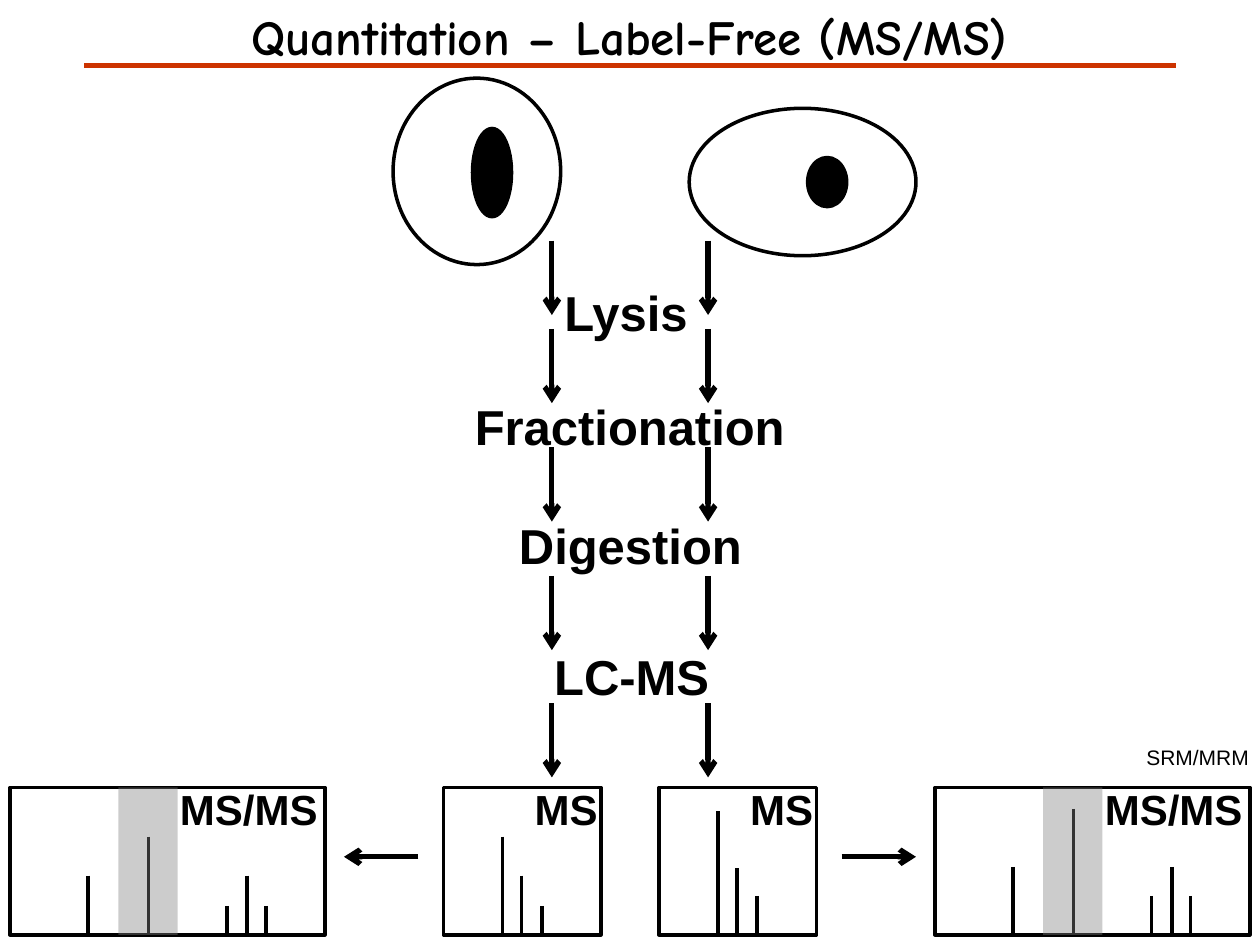
from lxml import etree
from pptx import Presentation
from pptx.dml.color import RGBColor
from pptx.enum import shapes, text
from pptx.oxml.ns import qn
from pptx.util import Inches, Pt

BLACK = "000000"
PANEL_HEIGHT = 1.17
MS_OFFSETS = (0.47, 0.62, 0.78)
MSMS_OFFSETS = (0.62, 1.1, 1.72, 1.88, 2.03)


def color(value):
    """Turn a hex string into a colour."""
    return RGBColor.from_string(value)


def write(shape, words, size=28, bold=True, font="Arial", align=text.PP_ALIGN.LEFT):
    """Put one formatted, unwrapped paragraph into a shape."""
    frame = shape.text_frame
    frame.word_wrap = False
    frame.auto_size = text.MSO_AUTO_SIZE.NONE
    frame.vertical_anchor = text.MSO_ANCHOR.TOP
    paragraph = frame.paragraphs[0]
    paragraph.text = words
    paragraph.alignment = align
    paragraph.font.size = Pt(size)
    paragraph.font.bold = bold
    paragraph.font.name = font
    paragraph.font.color.rgb = color(BLACK)


def add_label(slide, words, left, top, width, height, **style):
    """Add a text box with formatted words."""
    box = slide.shapes.add_textbox(Inches(left), Inches(top), Inches(width), Inches(height))
    write(box, words, **style)


def add_line(slide, x1, y1, x2, y2, width=2, line=BLACK, arrow=False):
    """Add a straight line, with an arrowhead at its end if asked."""
    connector = slide.shapes.add_connector(
        shapes.MSO_CONNECTOR.STRAIGHT, Inches(x1), Inches(y1), Inches(x2), Inches(y2))
    connector.line.color.rgb = color(line)
    connector.line.width = Pt(width)
    if arrow:
        etree.SubElement(connector.line._get_or_add_ln(), qn("a:tailEnd"), type="arrow")
    etree.SubElement(connector._element.spPr, qn("a:effectLst"))


def add_shape(slide, kind, left, top, width, height, fill=None, alpha=None, line=BLACK):
    """Add a preset shape with optional fill, opacity in percent and outline."""
    shape = slide.shapes.add_shape(
        kind, Inches(left), Inches(top), Inches(width), Inches(height))
    shape.shadow.inherit = False
    if fill:
        shape.fill.solid()
        shape.fill.fore_color.rgb = color(fill)
    else:
        shape.fill.background()
    if alpha:
        fill_color = shape._element.spPr.find(qn("a:solidFill"))[0]
        etree.SubElement(fill_color, qn("a:alpha"), val=str(alpha * 1000))
    if line:
        shape.line.color.rgb = color(line)
        shape.line.width = Pt(2)
    else:
        shape.line.fill.background()


def add_title(slide, left, top, width, height):
    """Place the title and the rule beneath it."""
    title = slide.shapes.title
    title.left, title.top = Inches(left), Inches(top)
    title.width, title.height = Inches(width), Inches(height)
    write(title, "Quantitation – Label-Free (MS/MS)", font="Comic Neue",
          align=text.PP_ALIGN.CENTER)
    add_line(slide, 0.67, 0.52, 9.33, 0.52, width=2.5, line="CC3300")


def add_cell(slide, left, top, width, height, nucleus):
    """Draw a cell outline with its nucleus, given relative to the cell."""
    oval = shapes.MSO_SHAPE.OVAL
    x, y, nucleus_width, nucleus_height = nucleus
    add_shape(slide, oval, left + x, top + y, nucleus_width, nucleus_height, fill=BLACK)
    add_shape(slide, oval, left, top, width, height)


def add_workflow(slide, left, right):
    """Draw the preparation steps and the two columns of arrows."""
    steps = (("Lysis", 4.38, 2.19, 1.19), ("Fractionation", 3.67, 3.1, 2.69),
             ("Digestion", 4.02, 4.04, 1.99), ("LC-MS", 4.3, 5.08, 1.45))
    for words, x, y, width in steps:
        add_label(slide, words, x, y, width, 0.57)
    for y in (1.91, 2.61, 3.55, 4.57, 5.58):
        for x in (left, right):
            add_line(slide, x, y, x, y + 0.59, width=3, arrow=True)


def add_spectrum(slide, left, top, width, words, offsets, heights, highlight=False):
    """Draw a framed spectrum with its label, peaks and optional highlight."""
    rectangle = shapes.MSO_SHAPE.RECTANGLE
    bottom = top + PANEL_HEIGHT
    add_shape(slide, rectangle, left, top, width, PANEL_HEIGHT)
    add_label(slide, words, left + width / 2, top - 0.08, width / 2 + 0.08, 0.51, size=24)
    for offset, height in zip(offsets, heights):
        add_line(slide, left + offset, bottom - height, left + offset, bottom)
    if highlight:
        add_shape(slide, rectangle, left + 0.86, top, 0.47, PANEL_HEIGHT,
                  fill="808080", alpha=40, line=None)


def add_spectra(slide, top):
    """Draw the row of spectra and the arrows from MS to MS/MS."""
    add_spectrum(slide, 0.08, top, 2.5, "MS/MS", MSMS_OFFSETS,
                 (0.47, 0.78, 0.23, 0.47, 0.23), highlight=True)
    add_spectrum(slide, 3.52, top, 1.25, "MS", MS_OFFSETS, (0.78, 0.47, 0.23))
    add_spectrum(slide, 5.23, top, 1.25, "MS", MS_OFFSETS, (0.98, 0.53, 0.31))
    add_spectrum(slide, 7.42, top, 2.5, "MS/MS", MSMS_OFFSETS,
                 (0.54, 1, 0.31, 0.54, 0.31), highlight=True)
    for start, end in ((3.32, 2.73), (6.68, 7.27)):
        add_line(slide, start, top + 0.55, end, top + 0.55, width=3, arrow=True)
    add_label(slide, "SRM/MRM", 9, top - 0.39, 1, 0.3, size=12, bold=False)


def main():
    """Build and save the slide."""
    presentation = Presentation()
    presentation.slide_width, presentation.slide_height = Inches(10), Inches(7.5)
    slide = presentation.slides.add_slide(presentation.slide_layouts[5])
    add_title(slide, 1.45, 0, 7.09, 0.57)
    add_cell(slide, 3.12, 0.62, 1.33, 1.48, nucleus=(0.63, 0.4, 0.31, 0.7))
    add_cell(slide, 5.47, 0.86, 1.8, 1.17, nucleus=(0.94, 0.39, 0.31, 0.39))
    add_workflow(slide, 4.38, 5.62)
    add_spectra(slide, 6.25)
    presentation.save("out.pptx")


if __name__ == "__main__":
    main()
